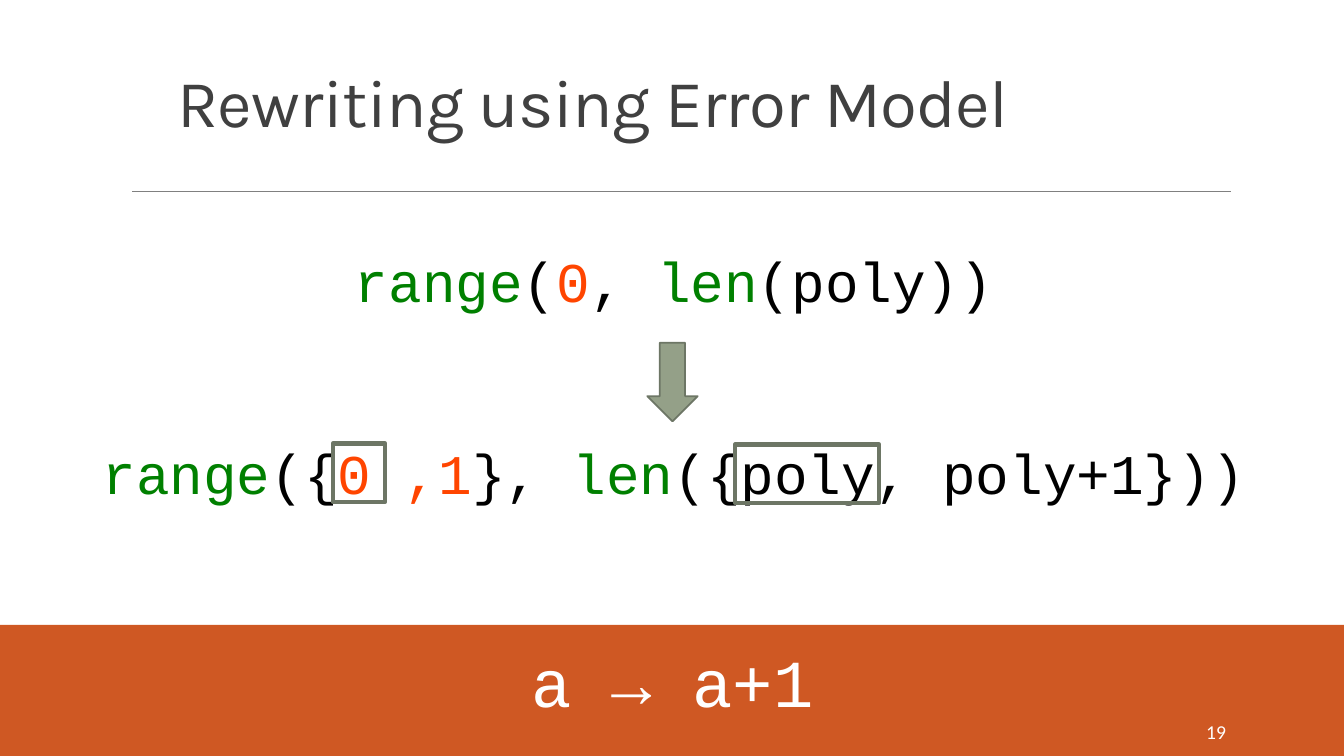
from lxml import etree
from pptx import Presentation
from pptx.dml.color import RGBColor
from pptx.enum.shapes import MSO_CONNECTOR, MSO_SHAPE
from pptx.enum.text import MSO_ANCHOR, MSO_AUTO_SIZE, PP_ALIGN
from pptx.oxml.ns import qn
from pptx.util import Inches, Pt

COLORS = {
    "title": "404040",
    "rule": "808080",
    "banner": "CF5823",
    "white": "FFFFFF",
    "code": "000000",
    "builtin": "008000",
    "literal": "FF4500",
    "arrow": "94A088",
    "outline": "6D7665",
}


def rgb(name):
    return RGBColor.from_string(COLORS[name])


def write_text(tf, runs, size, font, align=PP_ALIGN.LEFT,
               anchor=MSO_ANCHOR.MIDDLE, line_spacing=None, tracking=None):
    """Fill one paragraph with (text, colour name) runs; tracking is in points."""
    tf.word_wrap = True
    tf.auto_size = MSO_AUTO_SIZE.NONE
    tf.vertical_anchor = anchor
    p = tf.paragraphs[0]
    p.alignment = align
    if line_spacing:
        p.line_spacing = line_spacing
    for text, color in runs:
        r = p.add_run()
        r.text = text
        r.font.size = Pt(size)
        r.font.name = font
        r.font.color.rgb = rgb(color)
        if tracking:
            r.font._element.set("spc", str(int(tracking * 100)))


def place(sp, left, top, width, height):
    sp.left, sp.top = Inches(left), Inches(top)
    sp.width, sp.height = Inches(width), Inches(height)


def add_title(s, text):
    sp = s.shapes.title
    place(sp, 1.66, 0.78, 8.74, 0.67)
    write_text(sp.text_frame, [(text, "title")], 48, "Karla",
               anchor=MSO_ANCHOR.BOTTOM, line_spacing=0.85, tracking=-0.5)


def add_text(s, box, runs, size, font="Courier New", align=PP_ALIGN.CENTER):
    sp = s.shapes.add_textbox(*map(Inches, box))
    write_text(sp.text_frame, runs, size, font, align)


def add_block(s, shape, box, fill=None, line_width=None):
    sp = s.shapes.add_shape(shape, *map(Inches, box))
    sp.shadow.inherit = False
    if fill:
        sp.fill.solid()
        sp.fill.fore_color.rgb = rgb(fill)
    else:
        sp.fill.background()
    if line_width:
        sp.line.color.rgb = rgb("outline")
        sp.line.width = Pt(line_width)
    else:
        sp.line.fill.background()


def add_rule(s, left, right, top):
    line = s.shapes.add_connector(MSO_CONNECTOR.STRAIGHT, Inches(left),
                                  Inches(top), Inches(right), Inches(top))
    line.line.color.rgb = rgb("rule")
    line.line.width = Pt(0.5)
    etree.SubElement(line._element.spPr, qn("a:effectLst"))


def main():
    prs = Presentation()
    prs.slide_width, prs.slide_height = Inches(13.33), Inches(7.5)
    s = prs.slides.add_slide(prs.slide_layouts[5])

    add_title(s, "Rewriting using Error Model")
    add_rule(s, 1.31, 12.21, 1.9)

    add_text(s, (2.63, 2.38, 8.11, 0.8), [
        ("range", "builtin"), ("(", "code"), ("0", "literal"), (", ", "code"),
        ("len", "builtin"), ("(poly))", "code")], 40)
    add_block(s, MSO_SHAPE.DOWN_ARROW, (6.42, 3.4, 0.5, 0.78), "arrow", 1.25)
    add_text(s, (0.86, 4.28, 11.64, 0.8), [
        ("range", "builtin"), ("({", "code"), ("0 ,1", "literal"),
        ("}, ", "code"), ("len", "builtin"), ("({poly, poly+1}))", "code")], 40)
    for left, top, width in ((3.3, 4.4, 0.52), (7.29, 4.41, 1.43)):
        add_block(s, MSO_SHAPE.RECTANGLE, (left, top, width, 0.58), line_width=3)

    add_block(s, MSO_SHAPE.RECTANGLE, (0, 6.2, 13.33, 1.3), "banner")
    add_text(s, (1.14, 6.3, 11.06, 0.9), [("a → a+1", "white")], 48)
    add_text(s, (10.83, 7.06, 1.43, 0.4), [("19", "white")], 14, "Calibri",
             PP_ALIGN.RIGHT)

    prs.save("out.pptx")


if __name__ == "__main__":
    main()
